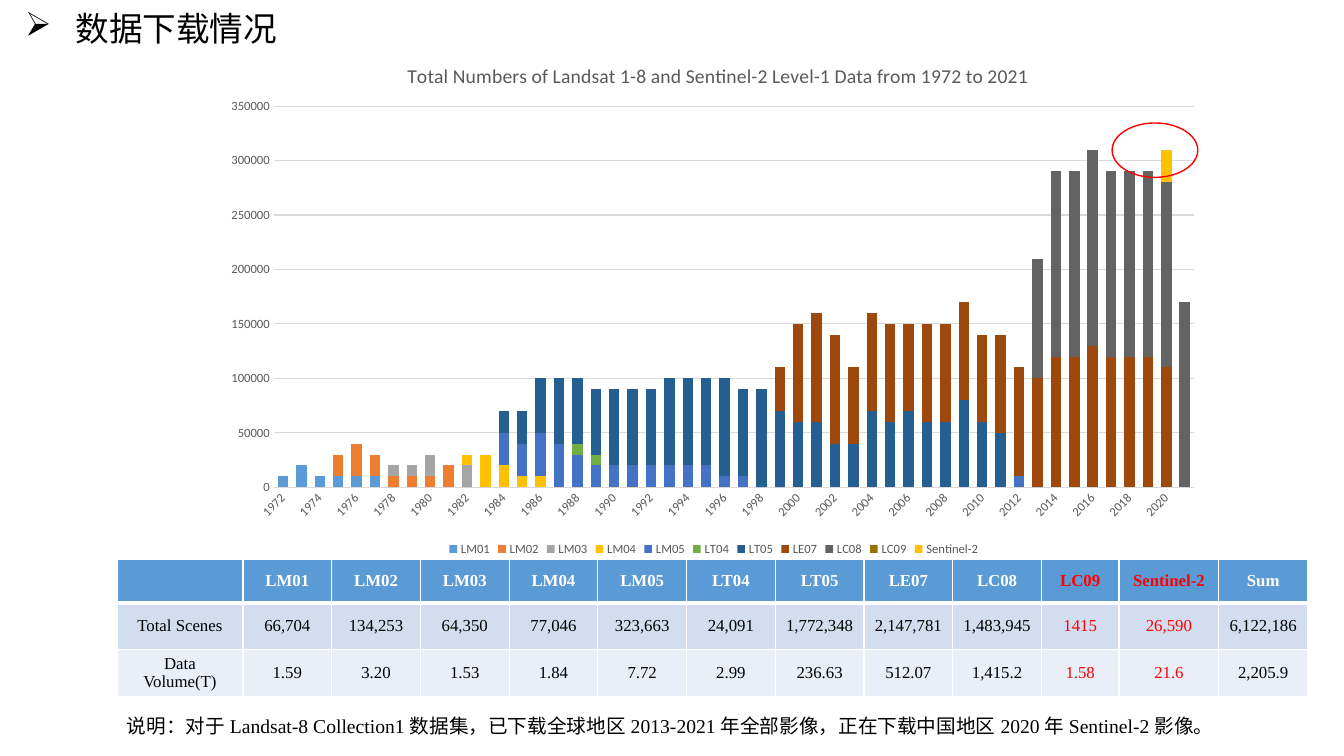
import pptx
import pptx.chart.data
import pptx.dml.color
import pptx.enum.chart
import pptx.enum.shapes
import pptx.enum.text
import pptx.oxml
import pptx.oxml.ns
import pptx.util
from dataclasses import dataclass
from typing import Any, Optional

Inches = pptx.util.Inches
Pt = pptx.util.Pt
RGB = pptx.dml.color.RGBColor.from_string
NS = pptx.oxml.ns.nsdecls


@dataclass(frozen=True)
class Theme:
    black: str = "000000"
    white: str = "FFFFFF"
    red: str = "FF0000"
    grey: str = "595959"
    grid: str = "D9D9D9"
    bands: tuple[str, ...] = ("5B9BD5", "D2DEEF", "EAEFF7")
    serif: str = "Times New Roman"
    sans: str = "Calibri"
    chinese: str = "Noto Sans CJK SC"
    heading: float = 24
    note: float = 14
    chart_title: float = 14
    cell: float = 12
    axis: float = 9


@dataclass(frozen=True)
class Box:
    left: float
    top: float
    width: float
    height: float

    def emu(self) -> tuple[int, ...]:
        return tuple(Inches(n) for n in (self.left, self.top, self.width, self.height))


@dataclass(frozen=True)
class Sensor:
    """Yearly scenes of one sensor, in units of 10,000, from its first year."""
    name: str
    color: str
    first_year: int
    scenes: tuple[Optional[int], ...]

    def values(self) -> list[Optional[int]]:
        by_year = dict(enumerate(self.scenes, self.first_year))
        return [None if by_year.get(y) is None else by_year[y] * 10000 for y in YEARS]


THEME = Theme()
YEARS = range(1972, 2022)
GAP = None
SENSORS = [
    Sensor("LM01", "5B9BD5", 1972, (1, 2, 1, 1, 1, 1, 0)),
    Sensor("LM02", "ED7D31", 1975, (2, 3, 2, 1, 1, 1, 2, 0)),
    Sensor("LM03", "A5A5A5", 1978, (1, 1, 2, 0, 2, 0)),
    Sensor("LM04", "FFC000", 1982, (1, 3, 2, 1, 1) + (0,) * 6),
    Sensor("LM05", "4472C4", 1984,
           (3, 3, 4, 4, 3) + (2,) * 7 + (1, 1, 0, 0) + (GAP,) * 12 + (1, 0)),
    Sensor("LT04", "70AD47", 1982, (0, 0, 0, GAP, GAP, 0, 1, 1, 0, 0, 0, 0)),
    Sensor("LT05", "255E91", 1984,
           (2, 3, 5, 6, 6, 6, 7, 7, 7, 8, 8, 8, 9, 8, 9, 7, 6, 6, 4, 4, 7, 6, 7, 6, 6,
            8, 6, 5, 0)),
    Sensor("LE07", "9E480E", 1999,
           (4, 9, 10, 10, 7, 9, 9, 8, 9, 9, 9, 8, 9, 10, 10, 12, 12, 13, 12, 12, 12, 11)),
    Sensor("LC08", "636363", 2013, (11, 17, 17, 18, 17, 17, 17, 17, 17)),
    Sensor("LC09", "997300", 2021, (0,)),
    Sensor("Sentinel-2", "FFC000", 2020, (3,)),
]
TOTALS = [
    ["", *(sensor.name for sensor in SENSORS), "Sum"],
    ["Total Scenes", "66,704", "134,253", "64,350", "77,046", "323,663", "24,091",
     "1,772,348", "2,147,781", "1,483,945", "1415", "26,590", "6,122,186"],
    ["Data Volume(T)", "1.59", "3.20", "1.53", "1.84", "7.72", "2.99",
     "236.63", "512.07", "1,415.2", "1.58", "21.6", "2,205.9"],
]
COLUMN_WIDTHS = [1.25] + [0.88] * 9 + [0.77, 0.99, 0.88]
ROW_HEIGHTS = [0.43, 0.46, 0.44]
NEW_COLUMNS = (10, 11)


def style(font: Any, size: float, color: str, face: str, bold: bool = False) -> None:
    font.size, font.name, font.bold = Pt(size), face, bold
    font.color.rgb = RGB(color)


def add_text(slide: Any, box: Box, text: str, size: float, face: str,
             spacing: float, wrap: bool = True) -> Any:
    frame = slide.shapes.add_textbox(*box.emu()).text_frame
    frame.word_wrap = wrap
    paragraph = frame.paragraphs[0]
    paragraph.text, paragraph.line_spacing = text, spacing
    style(paragraph.font, size, THEME.black, face)
    return frame


def add_heading(slide: Any) -> None:
    frame = add_text(slide, Box(0.15, 0.04, 3.16, 0.49), "数据下载情况",
                     THEME.heading, THEME.chinese, 0.9)
    frame.vertical_anchor = pptx.enum.text.MSO_ANCHOR.BOTTOM
    properties = frame.paragraphs[0]._p.get_or_add_pPr()
    properties.set("marL", str(Inches(0.5)))
    properties.set("indent", str(-Inches(0.5)))
    # Bullet goes ahead of the default run properties
    bullet = pptx.oxml.parse_xml(f'<a:buChar {NS("a")} char="➢"/>')
    properties.find(pptx.oxml.ns.qn("a:defRPr")).addprevious(bullet)


def place(element: Any, **shares: float) -> None:
    """Give a chart part a manual layout in shares of the chart."""
    old = element.find(pptx.oxml.ns.qn("c:layout"))
    if old is not None:
        element.remove(old)
    target = '<c:layoutTarget val="inner"/>' if "w" in shares else ""
    modes = "".join(f'<c:{axis}Mode val="edge"/>' for axis in "xy")
    sizes = "".join(f'<c:{key} val="{share}"/>' for key, share in shares.items())
    layout = pptx.oxml.parse_xml(
        f'<c:layout {NS("c")}><c:manualLayout>{target}{modes}{sizes}'
        '</c:manualLayout></c:layout>')
    text = element.find(pptx.oxml.ns.qn("c:tx"))
    if text is not None:
        text.addnext(layout)
    else:
        element.insert(0, layout)


def add_scenes_chart(slide: Any) -> None:
    data = pptx.chart.data.CategoryChartData()
    data.categories = [str(year) for year in YEARS]
    for sensor in SENSORS:
        data.add_series(sensor.name, sensor.values())
    kinds = pptx.enum.chart
    chart = slide.shapes.add_chart(kinds.XL_CHART_TYPE.COLUMN_STACKED,
                                   *Box(2.12, 0.38, 9.92, 5.18).emu(), data).chart
    style(chart.font, 10, THEME.black, THEME.sans)

    # Title and legend
    title = chart.chart_title.text_frame.paragraphs[0]
    title.text = "Total Numbers of Landsat 1-8 and Sentinel-2 Level-1 Data from 1972 to 2021"
    style(title.font, THEME.chart_title, THEME.grey, THEME.sans)
    chart.has_legend = True
    chart.legend.position = kinds.XL_LEGEND_POSITION.BOTTOM
    chart.legend.include_in_layout = False
    style(chart.legend.font, THEME.axis, THEME.grey, THEME.sans)

    # Columns
    plot = chart.plots[0]
    plot.gap_width, plot.overlap, plot.vary_by_categories = 75, 100, False
    for series, sensor in zip(plot.series, SENSORS):
        series.format.fill.solid()
        series.format.fill.fore_color.rgb = RGB(sensor.color)

    # Axes
    years, scenes = chart.category_axis, chart.value_axis
    for axis in (years, scenes):
        axis.major_tick_mark = axis.minor_tick_mark = kinds.XL_TICK_MARK.NONE
        axis.format.line.fill.background()
        style(axis.tick_labels.font, THEME.axis, THEME.grey, THEME.sans)
    scenes.minimum_scale, scenes.maximum_scale, scenes.major_unit = 0, 350000, 50000
    scenes.major_gridlines.format.line.color.rgb = RGB(THEME.grid)
    scenes.major_gridlines.format.line.width = Pt(0.75)
    years._element.txPr.bodyPr.set("rot", str(-45 * 60000))
    skip = pptx.oxml.parse_xml(f'<c:tickLblSkip {NS("c")} val="2"/>')
    years._element.find(pptx.oxml.ns.qn("c:noMultiLvlLbl")).addprevious(skip)

    place(chart.chart_title._element, x=0.19, y=0.04)
    place(chart._chartSpace.chart.plotArea, x=0.06, y=0.13, w=0.92, h=0.73)


def add_borders(cell: Any, bottom: float) -> None:
    properties = cell._tc.get_or_add_tcPr()
    for index, (side, width) in enumerate(zip("LRTB", (1, 1, 1, bottom))):
        properties.insert(index, pptx.oxml.parse_xml(
            f'<a:ln{side} {NS("a")} w="{Pt(width)}"><a:solidFill>'
            f'<a:srgbClr val="{THEME.white}"/></a:solidFill></a:ln{side}>'))


def add_totals_table(slide: Any) -> None:
    box = Box(1.16, 5.55, sum(COLUMN_WIDTHS), sum(ROW_HEIGHTS))
    table = slide.shapes.add_table(len(TOTALS), len(TOTALS[0]), *box.emu()).table
    for column, width in zip(table.columns, COLUMN_WIDTHS):
        column.width = Inches(width)
    for r, (row, height) in enumerate(zip(TOTALS, ROW_HEIGHTS)):
        table.rows[r].height = Inches(height)
        for c, text in enumerate(row):
            cell, header = table.cell(r, c), r == 0
            cell.text = text
            cell.vertical_anchor = pptx.enum.text.MSO_ANCHOR.MIDDLE
            cell.fill.solid()
            cell.fill.fore_color.rgb = RGB(THEME.bands[r])
            add_borders(cell, 3 if header else 1)
            color = THEME.white if header else THEME.black
            paragraph = cell.text_frame.paragraphs[0]
            paragraph.alignment = pptx.enum.text.PP_ALIGN.CENTER
            style(paragraph.font, THEME.cell, THEME.red if c in NEW_COLUMNS else color,
                  THEME.serif, header)


def add_highlight(slide: Any) -> None:
    ring = slide.shapes.add_shape(pptx.enum.shapes.MSO_SHAPE.OVAL,
                                  *Box(11.03, 1.22, 0.85, 0.54).emu())
    ring.shadow.inherit = False
    ring.fill.background()
    ring.line.color.rgb, ring.line.width = RGB(THEME.red), Pt(1)


def main() -> None:
    deck = pptx.Presentation()
    deck.slide_width, deck.slide_height = Inches(13.33), Inches(7.5)
    slide = deck.slides.add_slide(deck.slide_layouts[6])
    add_totals_table(slide)
    add_heading(slide)
    add_text(slide, Box(1.16, 6.92, 11.24, 0.41),
             "说明：对于Landsat-8 Collection1数据集，已下载全球地区2013-2021年全部影像，"
             "正在下载中国地区2020年Sentinel-2影像。", THEME.note, THEME.serif, 1.5)
    add_scenes_chart(slide)
    add_highlight(slide)
    deck.save("out.pptx")


if __name__ == "__main__":
    main()
